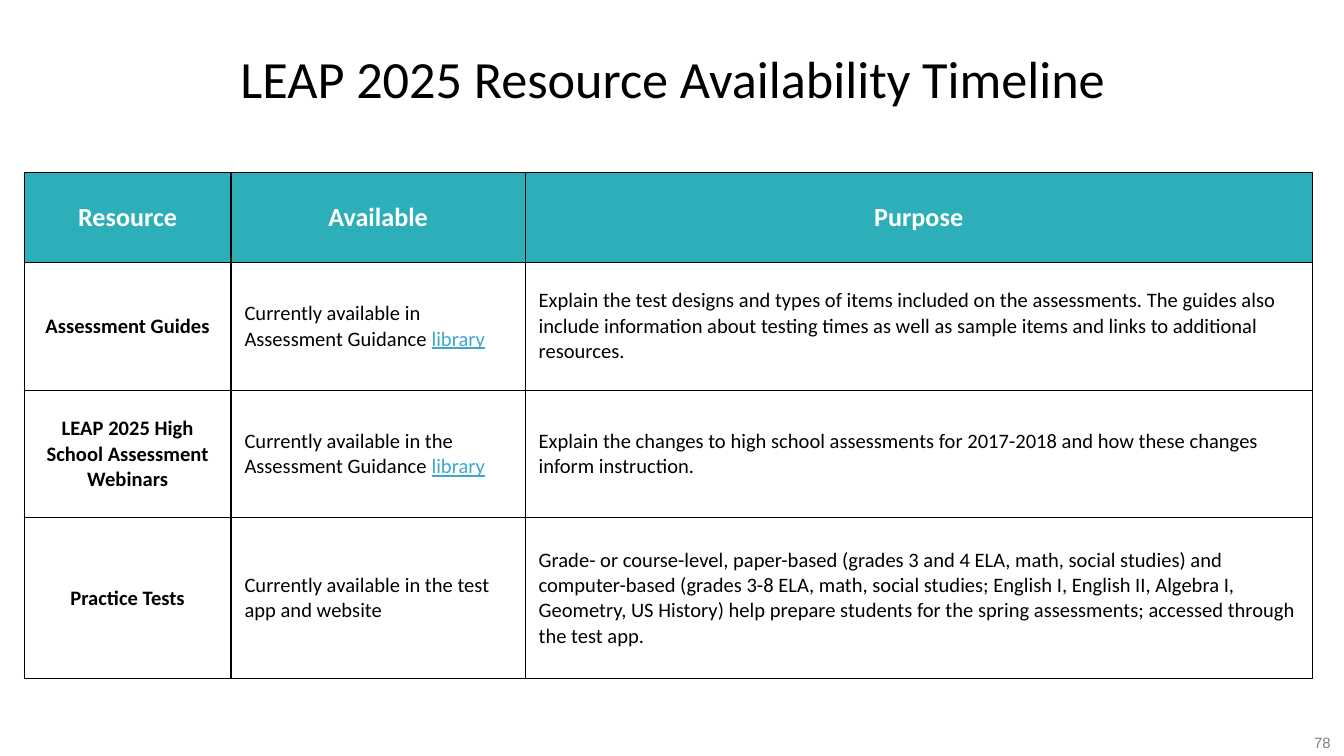
import pptx
import pptx.util
import pptx.dml.color
import pptx.enum.text
import pptx.oxml
import pptx.oxml.ns
from lxml import etree

Pt = pptx.util.Pt
ALIGN = pptx.enum.text.PP_ALIGN
MIDDLE = pptx.enum.text.MSO_ANCHOR.MIDDLE

TITLE = "LEAP 2025 Resource Availability Timeline"
PAGE_NUMBER = "78"
HEADERS = ["Resource", "Available", "Purpose"]
# Resource, availability, linked word (if any), purpose
RESOURCES = [
    ("Assessment Guides",
     "Currently available in Assessment Guidance ", "library",
     "Explain the test designs and types of items included on the assessments. "
     "The guides also include information about testing times as well as sample "
     "items and links to additional resources."),
    ("LEAP 2025 High School Assessment Webinars",
     "Currently available in the Assessment Guidance ", "library",
     "Explain the changes to high school assessments for 2017-2018 and how these "
     "changes inform instruction."),
    ("Practice Tests",
     "Currently available in the test app and website", "",
     "Grade- or course-level, paper-based (grades 3 and 4 ELA, math, social studies) "
     "and computer-based (grades 3-8 ELA, math, social studies; English I, English II, "
     "Algebra I, Geometry, US History) help prepare students for the spring "
     "assessments; accessed through the test app."),
]

THEME = {
    "font": "Calibri", "number_font": "Arial",
    "title": 28, "header": 14, "body": 11, "number": 8,
    "black": "000000", "white": "FFFFFF", "teal": "2DAFB9",
    "link": "3DA8CA", "gray": "7F7F7F", "border": 0.75,
}

SLIDE_SIZE = (720, 405)
TITLE_BOX = (46.8, 3.6, 627, 76.3)
NUMBER_BOX = (552.2, 387.4, 167.8, 20.2)
TABLE_ORIGIN = (13, 92.4)
COLUMN_WIDTHS = [110.8, 157.6, 421.6]
ROW_HEIGHTS = [48.2, 68.4, 68.4, 86]


def rgb(name):
    return pptx.dml.color.RGBColor.from_string(THEME[name])


def add_run(p, text, size, color, bold=False, underline=False, font="font"):
    r = p.add_run()
    r.text = text
    r.font.name = THEME[font]
    r.font.size = Pt(THEME[size])
    r.font.color.rgb = rgb(color)
    r.font.bold = bold
    r.font.underline = underline


def set_margins(target, side, end):
    target.margin_left = target.margin_right = Pt(side)
    target.margin_top = target.margin_bottom = Pt(end)


def add_text(slide, box, align, margin, text, size, color, font="font"):
    tf = slide.shapes.add_textbox(*map(Pt, box)).text_frame
    tf.word_wrap = True
    tf.vertical_anchor = MIDDLE
    set_margins(tf, 7.2, margin)
    p = tf.paragraphs[0]
    p.alignment = align
    add_run(p, text, size, color, font=font)


def set_borders(cell):
    """Draw all four cell edges; they must come before the fill in tcPr."""
    qn = pptx.oxml.ns.qn
    tc_pr = cell._tc.get_or_add_tcPr()
    for i, edge in enumerate(("lnL", "lnR", "lnT", "lnB")):
        ln = etree.Element(qn(f"a:{edge}"), w=str(Pt(THEME["border"])))
        fill = etree.SubElement(ln, qn("a:solidFill"))
        etree.SubElement(fill, qn("a:srgbClr"), val=THEME["black"])
        tc_pr.insert(i, ln)


def fill_cell(cell, fill, align, runs):
    cell.fill.solid()
    cell.fill.fore_color.rgb = rgb(fill)
    cell.vertical_anchor = MIDDLE
    set_margins(cell, 7.2, 5)
    set_borders(cell)
    p = cell.text_frame.paragraphs[0]
    p.alignment = align
    for run in runs:
        add_run(p, **run)


def body_run(text, color="black", **style):
    return dict(text=text, size="body", color=color, **style)


def add_timeline(slide):
    table = slide.shapes.add_table(
        len(ROW_HEIGHTS), len(COLUMN_WIDTHS), *map(Pt, TABLE_ORIGIN),
        Pt(sum(COLUMN_WIDTHS)), Pt(sum(ROW_HEIGHTS))).table
    for column, width in zip(table.columns, COLUMN_WIDTHS):
        column.width = Pt(width)
    for row, height in zip(table.rows, ROW_HEIGHTS):
        row.height = Pt(height)

    for c, header in enumerate(HEADERS):
        fill_cell(table.cell(0, c), "teal", ALIGN.CENTER,
                  [dict(text=header, size="header", color="white", bold=True)])
    for r, (resource, available, link, purpose) in enumerate(RESOURCES, 1):
        availability = [body_run(available)]
        if link:
            availability.append(body_run(link, "link", underline=True))
        cells = [(ALIGN.CENTER, [body_run(resource, bold=True)]),
                 (ALIGN.LEFT, availability),
                 (ALIGN.LEFT, [body_run(purpose)])]
        for c, (align, runs) in enumerate(cells):
            fill_cell(table.cell(r, c), "white", align, runs)


def main():
    prs = pptx.Presentation()
    prs.slide_width, prs.slide_height = map(Pt, SLIDE_SIZE)
    s = prs.slides.add_slide(prs.slide_layouts[6])
    add_text(s, TITLE_BOX, ALIGN.CENTER, 7.2, TITLE, "title", "black")
    add_timeline(s)
    add_text(s, NUMBER_BOX, ALIGN.RIGHT, 3.6, PAGE_NUMBER, "number", "gray", "number_font")
    prs.save("out.pptx")


if __name__ == "__main__":
    main()
